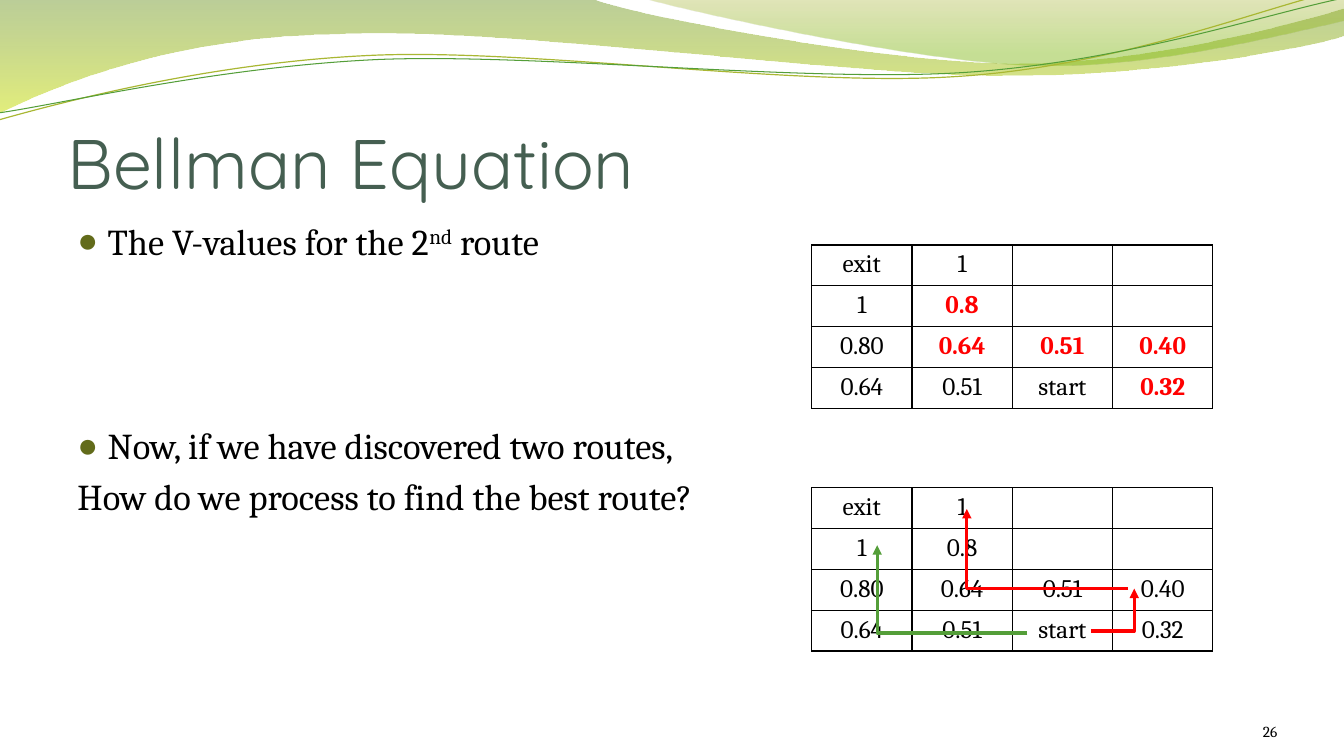
from math import cos, radians, sin

from lxml import etree
from pptx import Presentation
from pptx.dml.color import RGBColor
from pptx.enum.shapes import MSO_CONNECTOR
from pptx.enum.text import MSO_ANCHOR, PP_ALIGN
from pptx.oxml.ns import qn
from pptx.util import Inches, Pt

ELBOW = MSO_CONNECTOR.ELBOW
TOP, BOTTOM = MSO_ANCHOR.TOP, MSO_ANCHOR.BOTTOM
LEFT, CENTER, RIGHT = PP_ALIGN.LEFT, PP_ALIGN.CENTER, PP_ALIGN.RIGHT

BODY_FONT, TITLE_FONT = "Cambria", "Quicksand"
BLACK, RED, GREEN = "000000", "FF0000", "549E39"
BULLET_COLOR, TITLE_COLOR = "626B1A", "455F51"
LINE_TILT = -2.7
LINE_CENTER = (6.66, 0.58)

# Each wave: start point, then points (2 numbers) and Bezier curves (6 numbers)
LEFT_WAVE = [(0, 0), (5.87, -0.01), (6.34, 0.17, 8.84, 0.63, 10.11, 0.63),
             (11.37, 0.63, 12.77, 0.26, 13.33, 0.09), (13.34, 0.36),
             (13.11, 0.44, 11.59, 0.76, 9.94, 0.75),
             (8.29, 0.75, 5.09, 0.28, 3.43, 0.34),
             (1.72, 0.36, 0.61, 0.83, -0.02, 1.13)]
RIGHT_WAVE = [(6.38, -0.01), (6.79, 0.11, 9.09, 0.62, 10.25, 0.65),
              (11.4, 0.69, 12.82, 0.32, 13.33, 0.21), (13.33, 0)]
OLIVE_LINE = [(-0.01, 1.19), (0.63, 1.01, 2.1, 0.62, 3.69, 0.55),
              (5.27, 0.48, 7.89, 0.87, 9.49, 0.76),
              (11.1, 0.66, 12.51, 0.08, 13.3, -0.1)]
GREEN_LINE = [(-0.01, 1.12), (0.62, 1.03, 2.18, 0.66, 3.77, 0.59),
              (5.37, 0.53, 7.96, 0.82, 9.55, 0.72),
              (11.14, 0.62, 12.55, 0.14, 13.33, -0.02)]

V_VALUES = [["exit", "1", "", ""],
            ["1", "0.8", "", ""],
            ["0.80", "0.64", "0.51", "0.40"],
            ["0.64", "0.51", "start", "0.32"]]
SECOND_ROUTE = {(1, 1), (2, 1), (2, 2), (2, 3), (3, 3)}


def color(hex_string):
    return RGBColor.from_string(hex_string)


def add_element(parent, tag, **attributes):
    return etree.SubElement(parent, qn(tag), attributes)


def add_run(paragraph, text, size=18, font=BODY_FONT, fill=BLACK, bold=False, baseline=0):
    run = paragraph.add_run()
    run.text = text
    run.font.size, run.font.name, run.font.bold = Pt(size), font, bold
    run.font.color.rgb = color(fill)
    if baseline:
        run.font._element.set("baseline", str(baseline * 1000))


def add_text_frame(slide, box, margins, anchor=TOP):
    frame = slide.shapes.add_textbox(*map(Inches, box)).text_frame
    frame.word_wrap, frame.vertical_anchor = True, anchor
    (frame.margin_left, frame.margin_top,
     frame.margin_right, frame.margin_bottom) = map(Inches, margins)
    return frame


def add_label(slide, box, text, margins=(0, 0, 0, 0), align=LEFT, **text_format):
    paragraph = add_text_frame(slide, box, margins, BOTTOM).paragraphs[0]
    paragraph.alignment = align
    add_run(paragraph, text, **text_format)


def add_bullet(paragraph):
    properties = paragraph._p.get_or_add_pPr()
    properties.set("marL", str(Inches(0.3)))
    properties.set("indent", str(Inches(-0.3)))
    add_element(add_element(properties, "a:buClr"), "a:srgbClr", val=BULLET_COLOR)
    add_element(properties, "a:buSzPct", val="95000")
    add_element(properties, "a:buFont", typeface="Arial")
    add_element(properties, "a:buChar", char="●")


def turned(x, y, degrees):
    """Turn a point about the line centre and give it in EMU."""
    angle = radians(degrees)
    dx, dy = x - LINE_CENTER[0], y - LINE_CENTER[1]
    return (Inches(LINE_CENTER[0] + dx * cos(angle) - dy * sin(angle)),
            Inches(LINE_CENTER[1] + dx * sin(angle) + dy * cos(angle)))


def add_wave(slide, segments, closed, tilt=0):
    # Points are laid out level, then the whole shape is tilted
    points = [[turned(x, y, -tilt) for x, y in zip(segment[::2], segment[1::2])]
              for segment in segments]
    builder = slide.shapes.build_freeform(*points[0][0], scale=1.0)
    builder.add_line_segments([segment[-1] for segment in points[1:]], close=closed)
    shape = builder.convert_to_shape()
    # Bend the straight segments into Bezier curves
    for line, segment in zip(list(shape._element.iter(qn("a:lnTo"))), points[1:]):
        if len(segment) == 3:
            curve = etree.Element(qn("a:cubicBezTo"))
            for x, y in segment:
                add_element(curve, "a:pt", x=str(x - shape.left), y=str(y - shape.top))
            line.getparent().replace(line, curve)
    shape.rotation = tilt
    shape.shadow.inherit = False
    return shape


def add_filled_wave(slide, segments, stops):
    shape = add_wave(slide, segments, closed=True)
    shape.line.fill.background()
    shape.fill.gradient()
    shape.fill.gradient_angle = 270
    for stop, (position, fill, opacity) in zip(shape.fill.gradient_stops, stops):
        stop.position = position
        stop.color.rgb = color(fill)
        add_element(stop._gs[0], "a:alpha", val=str(opacity * 1000))


def add_line_wave(slide, segments, stroke, width):
    shape = add_wave(slide, segments, closed=False, tilt=LINE_TILT)
    shape.fill.background()
    shape.line.color.rgb, shape.line.width = color(stroke), Pt(width)


def add_header_waves(slide):
    add_filled_wave(slide, LEFT_WAVE, [(0, "69921C", 45), (1, "CCE10F", 55)])
    add_filled_wave(slide, RIGHT_WAVE, [(0, "9BAA1A", 30), (0.8, "81BA16", 45)])
    add_line_wave(slide, OLIVE_LINE, "A9B733", 0.85)
    add_line_wave(slide, GREEN_LINE, GREEN, 0.75)


def add_body(slide, box):
    frame = add_text_frame(slide, box, (0.1, 0.05, 0.1, 0.05))
    # Text runs, space before in points, bulleted
    paragraphs = [([("The V-values for the 2", 0), ("nd", 30), (" route", 0)], 5, True),
                  ([("Now, if we have discovered two routes,", 0)], 115, True),
                  ([("How do we process to find the best route?", 0)], 5, False)]
    for index, (runs, space, bulleted) in enumerate(paragraphs):
        paragraph = frame.add_paragraph() if index else frame.paragraphs[0]
        paragraph.space_before = Pt(space)
        if bulleted:
            add_bullet(paragraph)
        for text, baseline in runs:
            add_run(paragraph, text, size=26, baseline=baseline)


def add_value_table(slide, box, highlighted=()):
    table = slide.shapes.add_table(4, 4, *map(Inches, box)).table
    table.first_row = table.horz_banding = False
    for row, values in enumerate(V_VALUES):
        for column, value in enumerate(values):
            cell = table.cell(row, column)
            marked = (row, column) in highlighted
            paragraph = cell.text_frame.paragraphs[0]
            paragraph.alignment = CENTER
            if value:
                add_run(paragraph, value, fill=RED if marked else BLACK, bold=marked)
            properties = cell._tc.get_or_add_tcPr()
            for side in ("a:lnL", "a:lnR", "a:lnT", "a:lnB"):
                border = add_element(properties, side, w=str(Pt(1)))
                add_element(add_element(border, "a:solidFill"), "a:srgbClr", val=BLACK)
            cell.fill.background()


def add_route_arrow(slide, start, end, stroke):
    """Run horizontally from start, then vertically to end."""
    arrow = slide.shapes.add_connector(ELBOW, *map(Inches, start + end))
    arrow.line.color.rgb, arrow.line.width = color(stroke), Pt(2.25)
    add_element(arrow.line._get_or_add_ln(), "a:tailEnd", type="triangle")
    properties = arrow._element.spPr
    add_element(properties, "a:effectLst")
    adjustments = properties.find(qn("a:prstGeom")).get_or_add_avLst()
    add_element(adjustments, "a:gd", name="adj1", fmla="val 100000")


def add_routes(slide, box):
    left, top = box[:2]
    routes = [((2.14, 1.44), (0.65, 0.57), GREEN),
              ((2.77, 1.42), (3.2, 1), RED),
              ((3.14, 1), (1.54, 0.21), RED)]
    for start, end, stroke in routes:
        add_route_arrow(slide, (left + start[0], top + start[1]),
                        (left + end[0], top + end[1]), stroke)


def main():
    presentation = Presentation()
    presentation.slide_width, presentation.slide_height = Inches(13.33), Inches(7.5)
    slide = presentation.slides.add_slide(presentation.slide_layouts[6])
    add_header_waves(slide)
    add_label(slide, (0.67, 0.77, 12, 1.25), "Bellman Equation", margins=(0, 0.05, 0, 0),
              size=50, font=TITLE_FONT, fill=TITLE_COLOR)
    add_body(slide, (0.67, 2.12, 12, 4.8))
    add_value_table(slide, (8.05, 2.43, 3.98, 1.62), SECOND_ROUTE)
    routes_box = (8.05, 4.84, 3.98, 1.62)
    add_value_table(slide, routes_box)
    add_routes(slide, routes_box)
    add_label(slide, (11.56, 6.95, 1.11, 0.4), "26", align=RIGHT, size=11)
    presentation.save("out.pptx")


if __name__ == "__main__":
    main()
